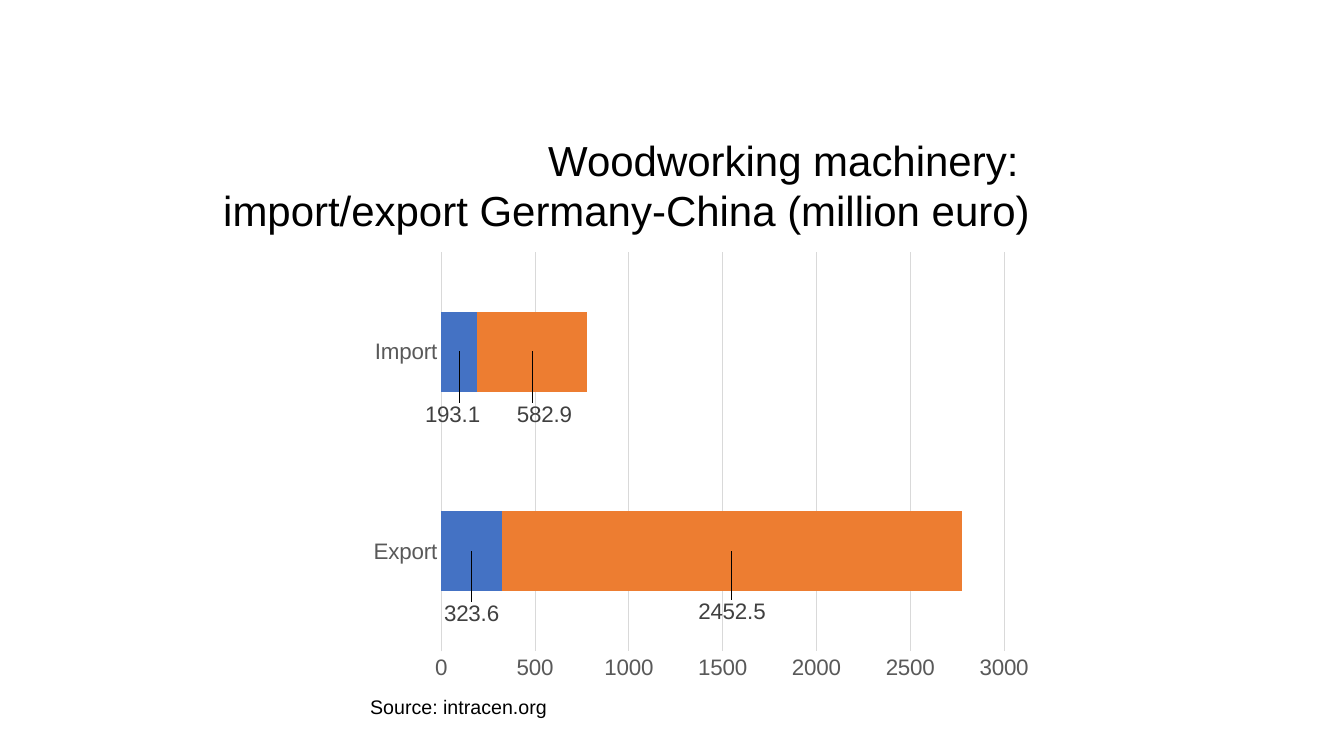
from lxml import etree
from pptx import Presentation
from pptx.chart.data import CategoryChartData
from pptx.dml.color import RGBColor
from pptx.enum.chart import XL_CHART_TYPE, XL_LABEL_POSITION, XL_TICK_MARK
from pptx.enum.text import PP_ALIGN
from pptx.oxml.ns import qn
from pptx.util import Inches, Pt

STACKED_BAR = XL_CHART_TYPE.BAR_STACKED
CENTER = XL_LABEL_POSITION.CENTER
NO_TICK = XL_TICK_MARK.NONE
LEFT, RIGHT = PP_ALIGN.LEFT, PP_ALIGN.RIGHT

WIDTH, HEIGHT = Inches(13.34), Inches(7.5)
FONT = "Arial"
COLORS = {
    "text": "000000",
    "axis": "595959",
    "label": "404040",
    "grid": "D9D9D9",
    "blue": "4472C4",
    "orange": "ED7D31",
}

CATEGORIES = ["Export", "Import"]
# Label shifts are shares of the chart's width and height, one per category.
SERIES = [
    ("Series 1", "blue", (323.6, 193.1), ((0, 0.14), (-0.01, 0.14))),
    ("Series 2", "orange", (2452.5, 582.9), ((0, 0.135), (0.018, 0.14))),
]
PLOT_AREA = {"x": 0.119, "y": 0.021, "w": 0.826, "h": 0.897}


def rgb(name):
    return RGBColor.from_string(COLORS[name])


def area(left, top, width, height):
    """Turn shares of the slide's size into lengths."""
    return (round(left * WIDTH), round(top * HEIGHT),
            round(width * WIDTH), round(height * HEIGHT))


def style_font(font, size, color):
    font.name = FONT
    font.size = Pt(size)
    font.color.rgb = rgb(color)


def add_text(page, text, place, size=14, color="text", align=LEFT):
    box = page.shapes.add_textbox(*area(*place))
    box.text_frame.word_wrap = True
    para = box.text_frame.paragraphs[0]
    para.text = text
    para.alignment = align
    for span in para.runs:
        style_font(span.font, size, color)


def set_layout(layout, settings):
    """Fill a c:layout element with a manual layout."""
    for child in list(layout):
        layout.remove(child)
    manual = etree.SubElement(layout, qn("c:manualLayout"))
    for tag, value in settings.items():
        etree.SubElement(manual, qn(f"c:{tag}")).set("val", str(value))


def style_line(line, color="grid"):
    line.width = Pt(0.75)
    line.color.rgb = rgb(color)


def style_axes(chart):
    for axis in (chart.category_axis, chart.value_axis):
        axis.major_tick_mark = axis.minor_tick_mark = NO_TICK
        style_font(axis.tick_labels.font, 16, "axis")
    style_line(chart.category_axis.format.line)
    values = chart.value_axis
    values.minimum_scale, values.maximum_scale, values.major_unit = 0, 3000, 500
    values.format.line.fill.background()
    style_line(values.major_gridlines.format.line)


def style_series(series, color, shifts):
    series.format.fill.solid()
    series.format.fill.fore_color.rgb = rgb(color)
    series.data_labels.show_value = True
    style_font(series.data_labels.font, 16, "label")
    for index in range(len(shifts)):
        label = series.points[index].data_label
        style_font(label.font, 16, "label")
        label.position = CENTER


def place_labels(chart):
    shifts = [shift for *_, moves in SERIES for shift in moves]
    for label, (x, y) in zip(chart.element.iter(qn("c:dLbl")), shifts):
        layout = etree.Element(qn("c:layout"))
        label.insert(1, layout)
        set_layout(layout, {"x": x, "y": y})


def place_plot(chart):
    plot_area = next(chart.element.iter(qn("c:plotArea")))
    layout = plot_area.find(qn("c:layout"))
    if layout is None:
        layout = etree.Element(qn("c:layout"))
        plot_area.insert(0, layout)
    modes = {"layoutTarget": "inner", "xMode": "edge", "yMode": "edge"}
    set_layout(layout, {**modes, **PLOT_AREA})


def add_trade_chart(page, place):
    data = CategoryChartData()
    data.categories = CATEGORIES
    for name, _, values, _ in SERIES:
        data.add_series(name, values)
    chart = page.shapes.add_chart(STACKED_BAR, *area(*place), data).chart
    chart.has_legend = chart.has_title = False
    style_font(chart.font, 16, "text")
    plot = chart.plots[0]
    plot.gap_width, plot.overlap = 150, 100
    plot.vary_by_categories = False
    style_axes(chart)
    for series, (_, color, _, shifts) in zip(plot.series, SERIES):
        style_series(series, color, shifts)
    place_labels(chart)
    place_plot(chart)


def main():
    deck = Presentation()
    deck.slide_width, deck.slide_height = WIDTH, HEIGHT
    page = deck.slides.add_slide(deck.slide_layouts[6])
    add_trade_chart(page, (0.268, 0.321, 0.507, 0.589))
    add_text(page, "Source: intracen.org", (0.268, 0.913, 0.162, 0.045))
    add_text(page,
             "Woodworking machinery: \vimport/export Germany-China (million euro)",
             (0.074, 0.171, 0.7, 0.148), size=30, align=RIGHT)
    deck.save("out.pptx")


if __name__ == "__main__":
    main()
